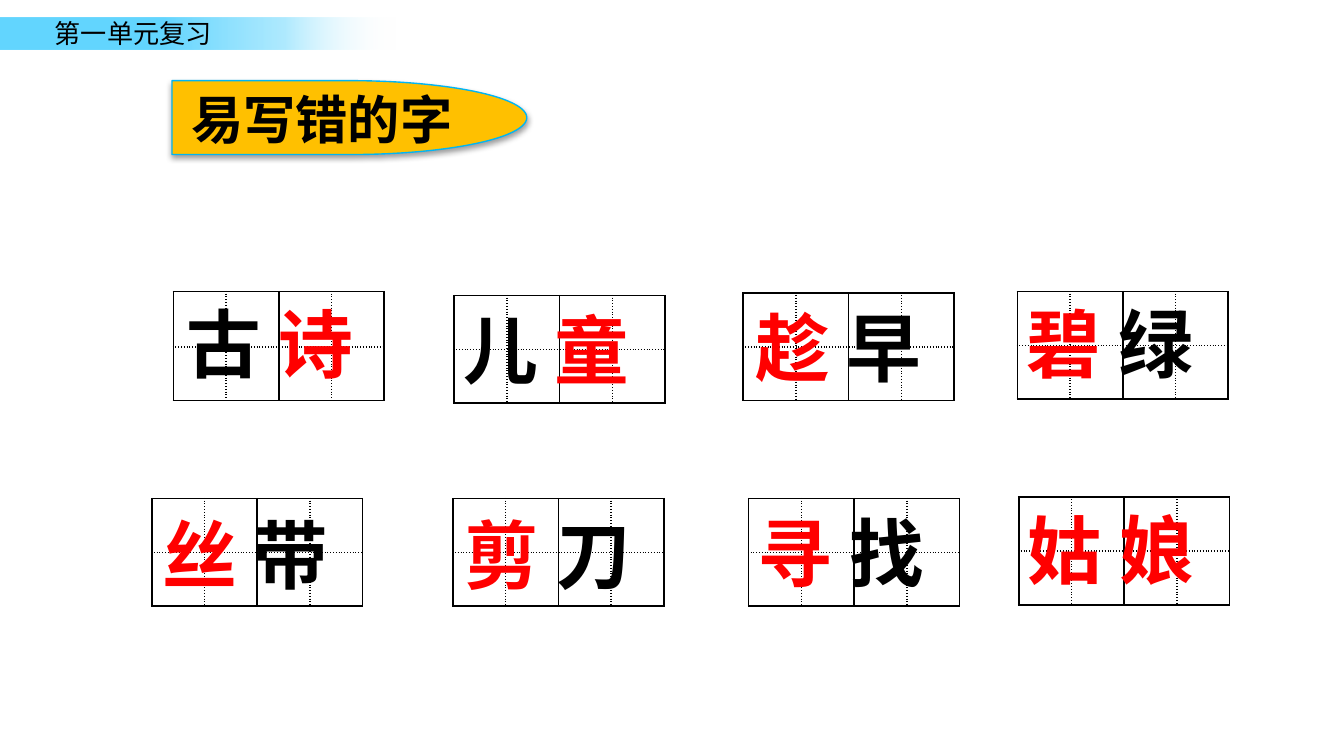
from dataclasses import dataclass
from itertools import groupby

from lxml import etree
from pptx import Presentation
from pptx.dml.color import RGBColor
from pptx.enum.shapes import MSO_SHAPE
from pptx.enum.text import MSO_ANCHOR, MSO_AUTO_SIZE, PP_ALIGN
from pptx.oxml import parse_xml
from pptx.oxml.ns import nsdecls, qn
from pptx.util import Inches, Pt

FONT = "Noto Sans CJK SC"
BLACK = RGBColor(0x00, 0x00, 0x00)
RED = RGBColor(0xFF, 0x00, 0x00)
AMBER = RGBColor(0xFF, 0xC0, 0x00)
BLUE = RGBColor(0x00, 0xB5, 0xF4)
SKY = RGBColor(0x63, 0xD6, 0xFF)
PALE_SKY = RGBColor(0x97, 0xE4, 0xFF)
WHITE = RGBColor(0xFF, 0xFF, 0xFF)

GRID_W, ROW_H, COLS, ROWS = 1.57, 0.4, 4, 2
WORD_W, WORD_H = 1.6, 0.77


@dataclass
class WordCard:
    text: str
    red: str  # characters shown in red
    grid: tuple[float, float]
    word: tuple[float, float]
    top_row: float = ROW_H


CARDS = [
    WordCard("古 诗", "诗", (1.29, 2.17), (1.29, 2.17), 0.41),
    WordCard("儿 童", "童", (3.38, 2.2), (3.35, 2.21)),
    WordCard("趁 早", "趁 ", (5.53, 2.18), (5.52, 2.2)),
    WordCard("碧 绿", "碧", (7.57, 2.17), (7.54, 2.17)),
    WordCard("丝 带", "丝", (1.13, 3.71), (1.11, 3.74)),
    WordCard("剪 刀", "剪", (3.37, 3.71), (3.36, 3.74)),
    WordCard("寻 找", "寻", (5.57, 3.71), (5.54, 3.72)),
    WordCard("姑 娘", "姑 娘", (7.58, 3.7), (7.55, 3.7)),
]


def style_paragraph(p, size: int, bold: bool = False) -> None:
    p.font.size, p.font.bold, p.font.name = Pt(size), bold, FONT
    p.font.color.rgb = BLACK
    # Chinese text takes the East Asian typeface
    props = p._p.pPr.find(qn("a:defRPr"))
    etree.SubElement(props, qn("a:ea"), typeface=FONT)


def add_label(s, x: float, y: float, w: float, h: float):
    tf = s.shapes.add_textbox(Inches(x), Inches(y), Inches(w), Inches(h)).text_frame
    tf.word_wrap = False
    tf.auto_size = MSO_AUTO_SIZE.SHAPE_TO_FIT_TEXT
    return tf.paragraphs[0]


def set_border(cell, side: str, dash: str) -> None:
    cell._tc.get_or_add_tcPr().append(parse_xml(
        f'<a:ln{side} {nsdecls("a")} w="12700"><a:solidFill><a:srgbClr val="{BLACK}"/>'
        f'</a:solidFill><a:prstDash val="{dash}"/></a:ln{side}>'))


def add_grid(s, card: WordCard) -> None:
    x, y = card.grid
    table = s.shapes.add_table(ROWS, COLS, Inches(x), Inches(y), Inches(GRID_W),
                               Inches(card.top_row + ROW_H)).table
    table.first_row = table.horz_banding = False
    for col in table.columns:
        col.width = Inches(GRID_W / COLS)
    for row, height in zip(table.rows, (card.top_row, ROW_H)):
        row.height = Inches(height)
    for i in range(ROWS):
        for j in range(COLS):
            cell = table.cell(i, j)
            cell.margin_top = cell.margin_bottom = 0
            cell.text_frame.paragraphs[0].font.size = Pt(12)
            # Solid frame around each square, dotted lines across it
            solid = {"L": j % 2 == 0, "R": j % 2 == 1, "T": i == 0, "B": i == 1}
            for side, is_solid in solid.items():
                set_border(cell, side, "solid" if is_solid else "sysDot")
            cell.fill.background()


def add_word(s, card: WordCard) -> None:
    p = add_label(s, *card.word, WORD_W, WORD_H)
    style_paragraph(p, 40, bold=True)
    for is_red, chars in groupby(card.text, key=lambda c: c in card.red):
        r = p.add_run()
        r.text = "".join(chars)
        if is_red:
            r.font.color.rgb = RED


def add_header(s) -> None:
    band = s.shapes.add_shape(MSO_SHAPE.RECTANGLE, 0, Inches(0.13), Inches(3.03), Inches(0.24))
    band.shadow.inherit = False
    band.line.fill.background()
    stops = "".join(
        f'<a:gs pos="{pos}000"><a:srgbClr val="{color}"><a:alpha val="{alpha}000"/></a:srgbClr></a:gs>'
        for pos, color, alpha in ((40, SKY, 100), (70, PALE_SKY, 76), (97, WHITE, 0)))
    band.element.spPr.find(qn("a:prstGeom")).addnext(parse_xml(
        f'<a:gradFill {nsdecls("a")}><a:gsLst>{stops}</a:gsLst><a:lin ang="0" scaled="0"/></a:gradFill>'))
    p = add_label(s, 0.31, 0.08, 1.37, 0.34)
    p.text = "第一单元复习"
    style_paragraph(p, 14)


def add_title(s) -> None:
    tag = s.shapes.add_shape(MSO_SHAPE.FLOWCHART_DELAY, Inches(1.28), Inches(0.6),
                             Inches(2.64), Inches(0.55))
    tag.fill.solid()
    tag.fill.fore_color.rgb = AMBER
    tag.line.color.rgb = BLUE
    tag.line.width = Pt(0.75)
    tag.shadow.inherit = False
    tag.element.spPr.find(qn("a:effectLst")).append(parse_xml(
        f'<a:outerShdw {nsdecls("a")} blurRad="{Pt(3.1)}" dist="{Pt(1.6)}" dir="5400000" '
        f'rotWithShape="0"><a:srgbClr val="{BLACK}"><a:alpha val="38000"/></a:srgbClr></a:outerShdw>'))

    title = s.shapes.title
    title.left, title.top = Inches(1.17), Inches(0.61)
    title.width, title.height = Inches(2.45), Inches(0.55)
    tag.element.addnext(title.element)  # title lies over its tag
    tf = title.text_frame
    tf.margin_left = tf.margin_right = Inches(0.07)
    tf.margin_top = tf.margin_bottom = Inches(0.04)
    tf.word_wrap = True
    tf.auto_size = MSO_AUTO_SIZE.NONE
    tf.vertical_anchor = MSO_ANCHOR.TOP
    p = tf.paragraphs[0]
    p.text = "易写错的字"
    p.alignment = PP_ALIGN.CENTER
    style_paragraph(p, 28, bold=True)


def main() -> None:
    prs = Presentation()
    # Widescreen, 16:9
    prs.slide_width = Inches(10)
    prs.slide_height = prs.slide_width * 9 // 16
    s = prs.slides.add_slide(prs.slide_layouts[5])
    add_header(s)
    add_title(s)
    # Practice squares with their words
    for card in CARDS:
        add_grid(s, card)
        add_word(s, card)
    prs.save("out.pptx")


if __name__ == "__main__":
    main()
